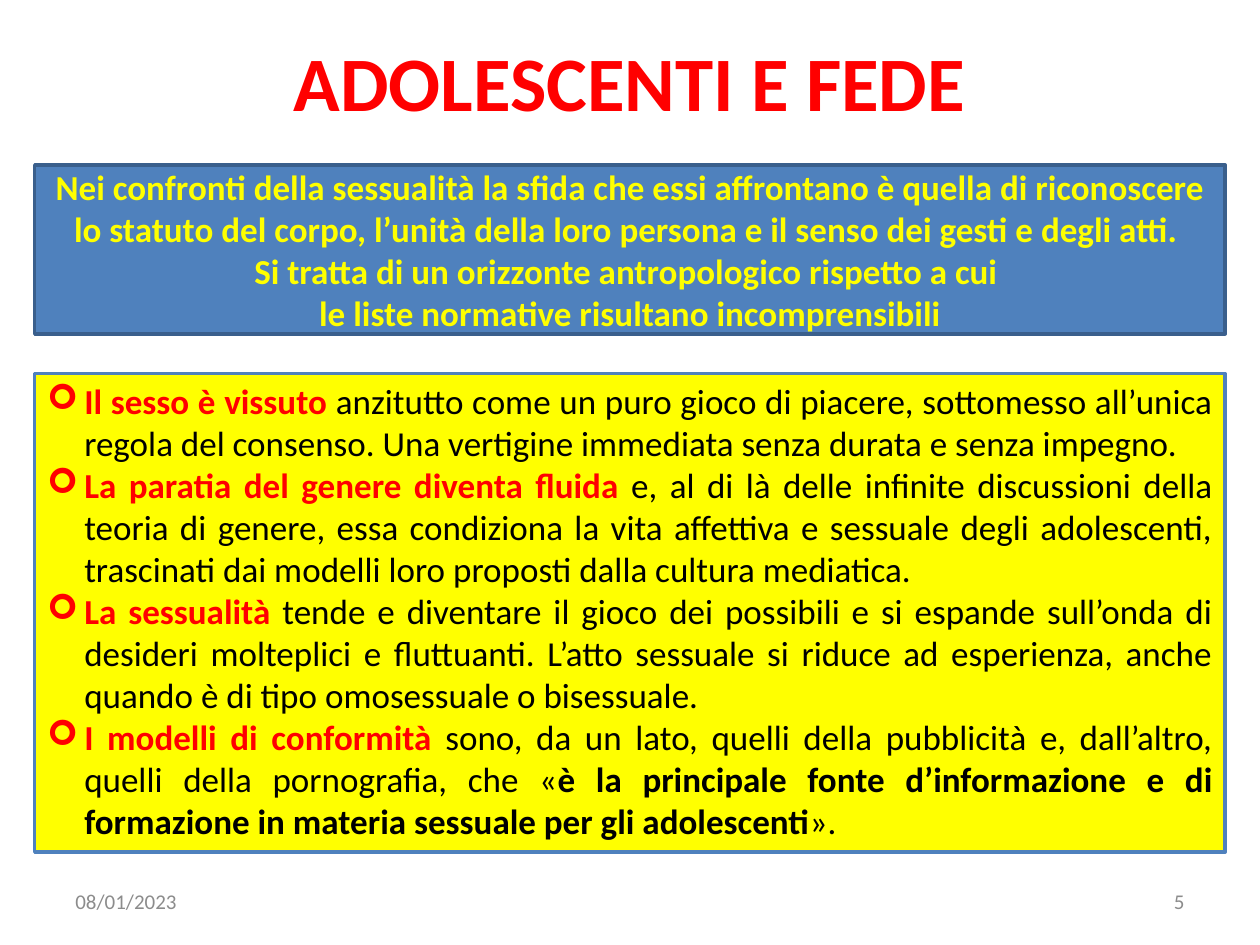
from lxml import etree
from pptx import Presentation
from pptx.dml.color import RGBColor
from pptx.enum.shapes import MSO_SHAPE as Shape
from pptx.enum.text import MSO_ANCHOR as Anchor, PP_ALIGN as Align
from pptx.oxml.ns import qn
from pptx.util import Cm, Pt

RED, YELLOW, BLACK, GREY = "FF0000", "FFFF00", "000000", "8C8C8C"
BLUE, DARK_BLUE = "4F81BD", "3A5F8C"

CHALLENGE = [
    "Nei confronti della sessualità la sfida che essi affrontano è quella di riconoscere "
    "lo statuto del corpo, l’unità della loro persona e il senso dei gesti e degli atti. ",
    "Si tratta di un orizzonte antropologico rispetto a cui ",
    "le liste normative risultano incomprensibili",
]

# Each point is a list of (text, colour, bold)
POINTS = [
    [("Il sesso è vissuto ", RED, True),
     ("anzitutto come un puro gioco di piacere, sottomesso all’unica regola del consenso. "
      "Una vertigine immediata senza durata e senza impegno. ", BLACK, False)],
    [("La paratia del genere diventa fluida ", RED, True),
     ("e, al di là delle infinite discussioni della teoria di genere, essa condiziona la vita "
      "affettiva e sessuale degli adolescenti, trascinati dai modelli loro proposti dalla "
      "cultura mediatica.", BLACK, False)],
    [("La sessualità ", RED, True),
     ("tende e diventare il gioco dei possibili e si espande sull’onda di desideri molteplici "
      "e fluttuanti. L’atto sessuale si riduce ad esperienza, anche quando è di tipo "
      "omosessuale o bisessuale.", BLACK, False)],
    [("I modelli di conformità ", RED, True),
     ("sono, da un lato, quelli della pubblicità e, dall’altro, quelli della pornografia, "
      "che «", BLACK, False),
     ("è la principale fonte d’informazione e di formazione in materia sessuale per gli "
      "adolescenti", BLACK, True),
     ("».", BLACK, False)],
]


def rgb(hex_colour):
    return RGBColor.from_string(hex_colour)


def style(paragraph, size, align, colour=None, bold=None):
    paragraph.alignment = align
    font = paragraph.font
    font.name, font.size, font.bold = "Calibri", Pt(size), bold
    if colour:
        font.color.rgb = rgb(colour)


def add_label(slide, box, text, size, align, colour, bold=False):
    frame = slide.shapes.add_textbox(*box).text_frame
    frame.word_wrap = True
    frame.vertical_anchor = Anchor.MIDDLE
    frame.text = text
    style(frame.paragraphs[0], size, align, colour, bold)


def add_panel(slide, box, fill, line, anchor):
    panel = slide.shapes.add_shape(Shape.RECTANGLE, *box)
    panel.shadow.inherit = False
    panel.fill.solid()
    panel.fill.fore_color.rgb = rgb(fill)
    panel.line.color.rgb = rgb(line)
    panel.line.width = Pt(2)
    panel.text_frame.word_wrap = True
    panel.text_frame.vertical_anchor = anchor
    return panel.text_frame


def add_bullet(paragraph, symbol, indent, colour):
    properties = paragraph._p.get_or_add_pPr()
    properties.set("marL", str(indent))
    properties.set("indent", str(-indent))
    bullet_colour = etree.SubElement(properties, qn("a:buClr"))
    etree.SubElement(bullet_colour, qn("a:srgbClr"), val=colour)
    etree.SubElement(properties, qn("a:buFont"), typeface="Wingdings")
    etree.SubElement(properties, qn("a:buChar"), char=symbol)


def add_challenge(slide, box):
    frame = add_panel(slide, box, BLUE, DARK_BLUE, Anchor.MIDDLE)
    frame.text = "\n".join(CHALLENGE)
    for paragraph in frame.paragraphs:
        style(paragraph, 20, Align.CENTER, YELLOW, True)


def add_points(slide, box):
    frame = add_panel(slide, box, YELLOW, BLUE, Anchor.TOP)
    for index, point in enumerate(POINTS):
        paragraph = frame.add_paragraph() if index else frame.paragraphs[0]
        add_bullet(paragraph, "➢", Cm(0.75), RED)
        style(paragraph, 20, Align.JUSTIFY)
        for text, colour, bold in point:
            run = paragraph.add_run()
            run.text = text
            run.font.bold = bold
            run.font.color.rgb = rgb(colour)


def add_footer(slide, box):
    left, top, width, height = box
    label_width = Cm(5.93)
    add_label(slide, (left, top, label_width, height), "08/01/2023", 12, Align.LEFT, GREY)
    add_label(slide, (left + width - label_width, top, label_width, height),
              "5", 12, Align.RIGHT, GREY)


def main():
    deck = Presentation()
    deck.slide_width, deck.slide_height = Cm(25.4), Cm(19.05)
    slide = deck.slides.add_slide(deck.slide_layouts[6])

    # Title
    add_label(slide, (Cm(1.9), Cm(0.53), Cm(21.6), Cm(2.2)),
              "ADOLESCENTI E FEDE", 44, Align.CENTER, RED, True)
    # Date and page number
    add_footer(slide, (Cm(1.27), Cm(17.65), Cm(22.86), Cm(1.02)))
    # Panels
    panel_left, panel_width = Cm(0.7), Cm(24)
    add_points(slide, (panel_left, Cm(7.53), panel_width, Cm(9.65)))
    add_challenge(slide, (panel_left, Cm(3.33), panel_width, Cm(3.4)))

    deck.save("out.pptx")


if __name__ == "__main__":
    main()
